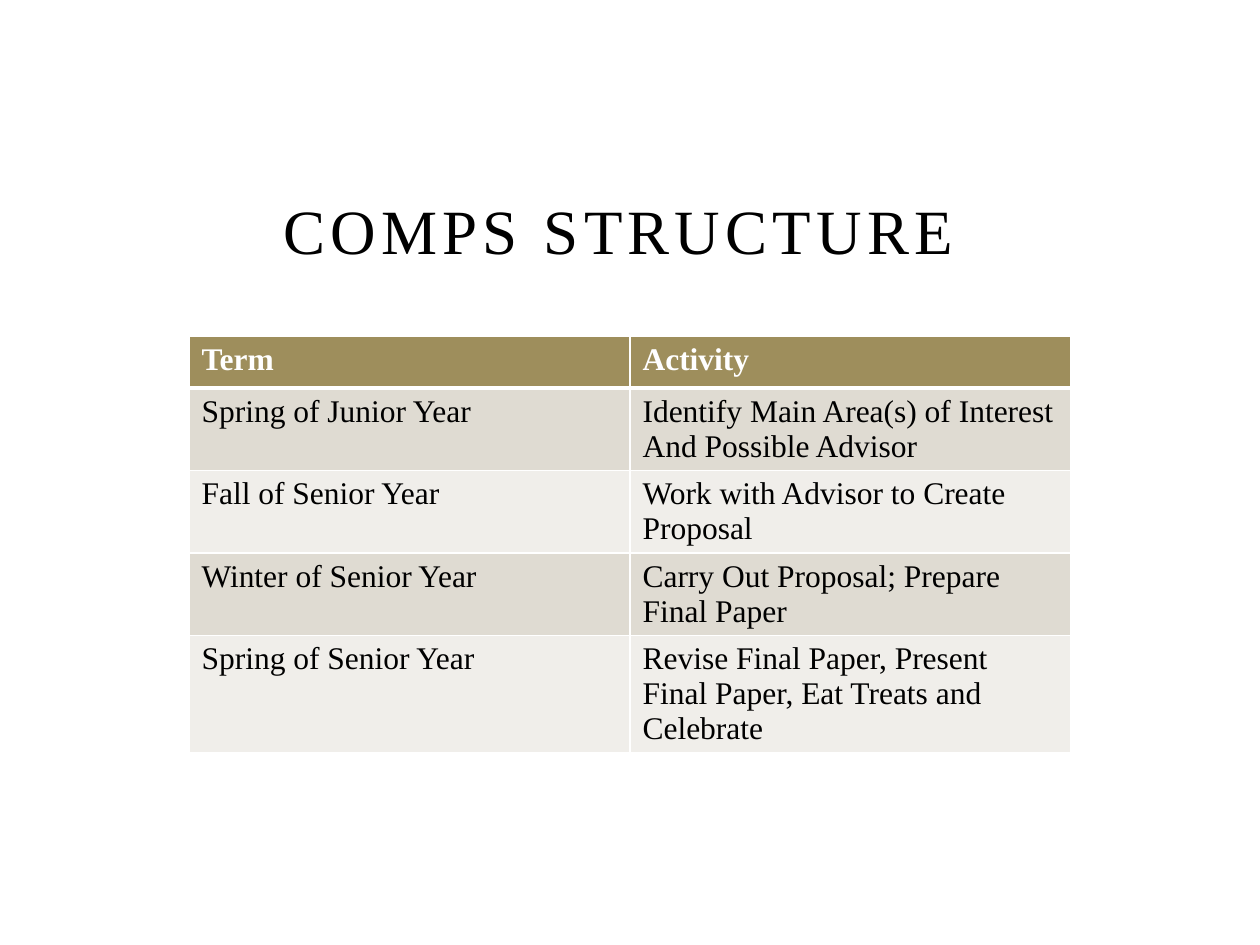
from lxml import etree
from pptx import Presentation
from pptx.dml.color import RGBColor
from pptx.enum.text import MSO_ANCHOR, PP_ALIGN
from pptx.oxml.ns import qn
from pptx.util import Inches, Pt

# Content
TITLE = "COMPS STRUCTURE\t"
ROWS = [
    ("Term", "Activity"),
    ("Spring of Junior Year", "Identify Main Area(s) of Interest\nAnd Possible Advisor"),
    ("Fall of Senior Year", "Work with Advisor to Create Proposal"),
    ("Winter of Senior Year", "Carry Out Proposal; Prepare Final Paper"),
    ("Spring of Senior Year",
     "Revise Final Paper, Present Final Paper, Eat Treats and Celebrate"),
]
COLORS = {"text": "000000", "white": "FFFFFF", "header": "9E8E5C",
          "odd": "DFDBD2", "even": "F0EEEA"}
FONT = "Times New Roman"

# Layout, in inches
SLIDE_WIDTH, SLIDE_HEIGHT = 10, 7.5
MARGIN = 0.15 * SLIDE_WIDTH
CONTENT_WIDTH = SLIDE_WIDTH - 2 * MARGIN
TITLE_TOP, TITLE_HEIGHT = 1.42, 0.75
TABLE_TOP, ROW_HEIGHT = 2.67, 0.41


def style_runs(text_frame, size, color, bold=False):
    for paragraph in text_frame.paragraphs:
        for run in paragraph.runs:
            font = run.font
            font.name, font.size, font.bold = FONT, Pt(size), bold
            font.color.rgb = RGBColor.from_string(COLORS[color])


def set_borders(cell, bottom_width):
    properties = cell._tc.get_or_add_tcPr()
    for side, width in (("L", 1), ("R", 1), ("T", 1), ("B", bottom_width)):
        line = etree.SubElement(properties, qn(f"a:ln{side}"), w=str(Pt(width)))
        fill = etree.SubElement(line, qn("a:solidFill"))
        etree.SubElement(fill, qn("a:srgbClr"), val=COLORS["white"])


presentation = Presentation()
presentation.slide_width = Inches(SLIDE_WIDTH)
presentation.slide_height = Inches(SLIDE_HEIGHT)
slide = presentation.slides.add_slide(presentation.slide_layouts[5])

# Title
title = slide.shapes.title
title.left, title.top = Inches(MARGIN), Inches(TITLE_TOP)
title.width, title.height = Inches(CONTENT_WIDTH), Inches(TITLE_HEIGHT)
title_frame = title.text_frame
title_frame.text = TITLE
title_frame.vertical_anchor = MSO_ANCHOR.BOTTOM
title_frame.paragraphs[0].alignment = PP_ALIGN.CENTER
style_runs(title_frame, 36, "text")
for run in title_frame.paragraphs[0].runs:
    run.font._element.set("spc", "300")

# Term and activity table
table = slide.shapes.add_table(
    len(ROWS), len(ROWS[0]), Inches(MARGIN), Inches(TABLE_TOP),
    Inches(CONTENT_WIDTH), Inches(ROW_HEIGHT * len(ROWS))).table
for row_index, row in enumerate(ROWS):
    is_header = row_index == 0
    fill_name = "header" if is_header else ("even", "odd")[row_index % 2]
    for column_index, text in enumerate(row):
        cell = table.cell(row_index, column_index)
        cell.text_frame.text = text
        style_runs(cell.text_frame, 18, "white" if is_header else "text", is_header)
        set_borders(cell, 3 if is_header else 1)
        cell.fill.solid()
        cell.fill.fore_color.rgb = RGBColor.from_string(COLORS[fill_name])

presentation.save("out.pptx")
